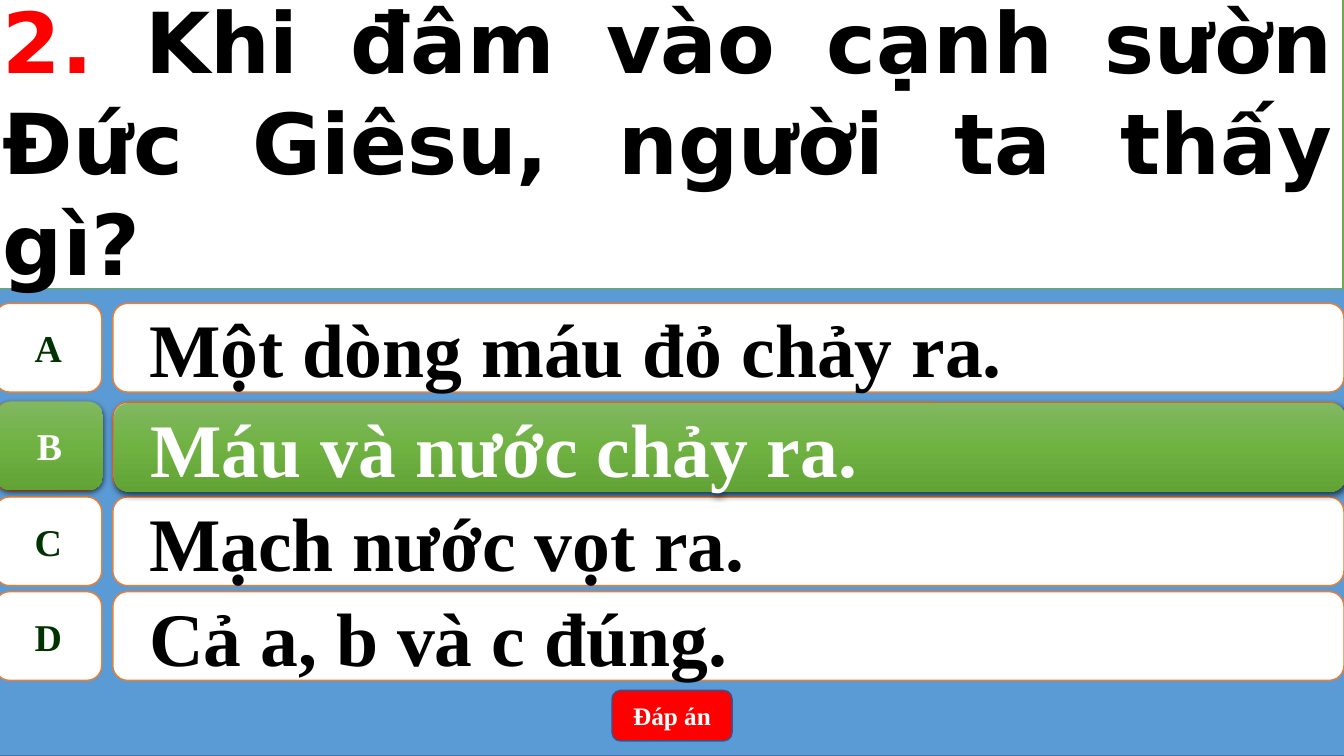
from pptx import Presentation, util as u
from pptx.dml.color import RGBColor
from pptx.enum import shapes, text
from pptx.oxml import parse_xml

HUES = {
    "sky": "5B9BD5", "navy": "43739E", "blue": "325491", "white": "FFFFFF",
    "black": "000000", "red": "FF0000", "rust": "ED7D31", "pine": "003300",
    "leaf": "70AD47", "light": "81B861", "mid": "6FB242", "deep": "62A336",
}
SERIF = "Times New Roman"
SANS = "DejaVu Sans"
SPACE = 'xmlns:a="http://schemas.openxmlformats.org/drawingml/2006/main"'
KIND = shapes.MSO_SHAPE
ALIGN = text.PP_ALIGN


def hue(name):
    return RGBColor.from_string(HUES[name])


class Quiz:
    def __init__(self):
        self.deck = Presentation()
        self.deck.slide_width = u.Inches(13.33)
        self.deck.slide_height = u.Inches(7.5)
        self.slide = self.deck.slides.add_slide(self.deck.slide_layouts[5])

    def place(self, x, y, wide, high):
        cols = self.deck.slide_width / 100
        rows = self.deck.slide_height / 100
        return [int(n) for n in (x * cols, y * rows, wide * cols, high * rows)]

    def paint(self, shape, fill, line):
        shape.fill.solid()
        shape.fill.fore_color.rgb = hue(fill)
        shape.line.color.rgb = hue(line)
        shape.line.width = u.Pt(1)

    def glow(self, shape):
        stops = "".join(
            f'<a:gs pos="{i * 50000}"><a:srgbClr val="{HUES[name]}"/></a:gs>'
            for i, name in enumerate(("light", "mid", "deep")))
        shape.element.spPr.append(parse_xml(
            f'<a:gradFill {SPACE} rotWithShape="1"><a:gsLst>{stops}</a:gsLst>'
            '<a:lin ang="5400000" scaled="0"/></a:gradFill>'))
        shape.line.fill.background()
        shape.element.spPr.append(parse_xml(
            f'<a:effectLst {SPACE}><a:outerShdw blurRad="{u.Pt(4.5)}" '
            f'dist="{u.Pt(1.5)}" dir="5400000" algn="ctr" rotWithShape="0">'
            f'<a:srgbClr val="{HUES["black"]}"><a:alpha val="63000"/>'
            '</a:srgbClr></a:outerShdw></a:effectLst>'))

    def box(self, home, kind, spot, fill=None, line=None):
        shape = home.add_shape(kind, *self.place(*spot))
        if fill:
            shape.shadow.inherit = False
            self.paint(shape, fill, line)
        else:
            self.glow(shape)
        return shape

    def label(self, shape, runs, size, font, align, wrap=True):
        frame = shape.text_frame
        frame.word_wrap = wrap
        frame.auto_size = text.MSO_AUTO_SIZE.NONE
        frame.vertical_anchor = text.MSO_ANCHOR.MIDDLE
        para = frame.paragraphs[0]
        para.alignment = align
        for words, tint in runs:
            run = para.add_run()
            run.text = words
            run.font.name = font
            run.font.size = u.Pt(size)
            run.font.bold = True
            run.font.color.rgb = hue(tint)
        return para

    def back(self):
        self.box(self.slide.shapes, KIND.RECTANGLE, (-0.38, 0, 100.45, 100), "sky", "navy")

    def row(self, mark, words, y, right=False):
        home = self.slide.shapes.add_group_shape().shapes
        look = (None, None) if right else ("white", "rust")
        shift = 0.1 if right else 0
        tab = self.box(home, KIND.FLOWCHART_ALTERNATE_PROCESS,
                       (shift - 0.38, y - shift, 7.95, 11.73), *look)
        self.label(tab, [(mark, "white" if right else "pine")], 27, SERIF,
                   ALIGN.CENTER, False)
        bar = self.box(home, KIND.ROUNDED_RECTANGLE,
                       (8.4 + shift, y + shift, 91.6, 11.73), *look)
        para = self.label(bar, [(words, "white" if right else "black")], 54, SERIF,
                          ALIGN.LEFT)
        para.level = 1
        props = para._p.get_or_add_pPr()
        props.set("marL", str(u.Inches(0.5)))
        props.set("indent", str(u.Inches(-0.28)))

    def button(self, words):
        shape = self.box(self.slide.shapes, KIND.ROUNDED_RECTANGLE,
                         (45.54, 91.33, 8.93, 6.67), "red", "blue")
        self.label(shape, [(words, "white")], 18, SERIF, ALIGN.CENTER)

    def title(self, runs):
        shape = self.slide.shapes.title
        shape.left, shape.top, shape.width, shape.height = self.place(
            -0.53, -0.93, 100.45, 39.07)
        self.paint(shape, "white", "leaf")
        para = self.label(shape, runs, 60, SANS, ALIGN.JUSTIFY)
        para.line_spacing = u.Pt(72)
        shape.element.getparent().append(shape.element)


def main():
    quiz = Quiz()
    quiz.back()
    picks = [("A", "Một dòng máu đỏ chảy ra."), ("B", "Máu và nước chảy ra."),
             ("C", "Mạch nước vọt ra."), ("D", "Cả a, b và c đúng.")]
    tops = [40.13] + [53.2 + 12.53 * i for i in range(3)]
    for (mark, words), y in zip(picks, tops):
        quiz.row(mark, words, y)
    quiz.row(*picks[1], tops[1], right=True)
    quiz.button("Đáp án")
    quiz.title([("2. ", "red"),
                ("Khi đâm vào cạnh sườn Đức Giêsu, người ta thấy gì?", "black")])
    quiz.deck.save("out.pptx")


if __name__ == "__main__":
    main()
